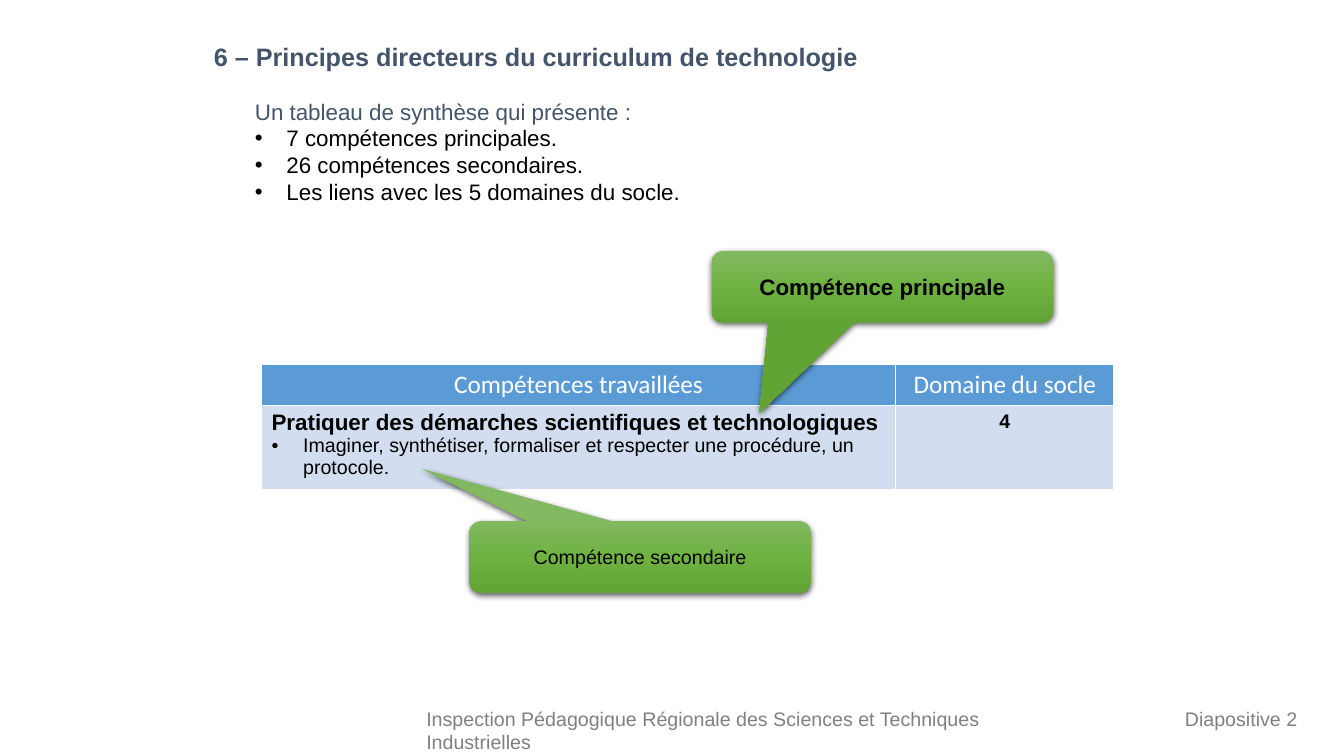
"""Build the slide on the guiding principles of the technology curriculum."""
from pptx import Presentation
from pptx.dml.color import RGBColor
from pptx.enum import shapes, text
from pptx.oxml import parse_xml
from pptx.oxml.ns import nsdecls
from pptx.util import Pt

NAVY = RGBColor(0x44, 0x54, 0x6A)
GREY = RGBColor(0x80, 0x80, 0x80)
BLACK = RGBColor(0, 0, 0)
WHITE = RGBColor(0xFF, 0xFF, 0xFF)
BLUE = RGBColor(0x5B, 0x9B, 0xD5)
PALE = RGBColor(0xD2, 0xDE, 0xEF)
GREENS = [(0, RGBColor(0x81, 0xB8, 0x61)), (50, RGBColor(0x6F, 0xB2, 0x42)),
          (100, RGBColor(0x62, 0xA3, 0x36))]
LEFT, MID, RIGHT = text.PP_ALIGN.LEFT, text.PP_ALIGN.CENTER, text.PP_ALIGN.RIGHT


def style(para, size, color, bold=False, align=LEFT, face="Arial"):
    """Format a paragraph and its runs."""
    para.alignment = align
    for run in para.runs:
        font = run.font
        font.name, font.size, font.bold = face, Pt(size), bold
        font.color.rgb = color


def bullet(para):
    """Give a paragraph a hanging round bullet."""
    props = para._p.get_or_add_pPr()
    props.set("marL", str(Pt(22.5)))
    props.set("indent", str(-Pt(22.5)))
    props.append(parse_xml(f'<a:buFont {nsdecls("a")} typeface="Arial"/>'))
    props.append(parse_xml(f'<a:buChar {nsdecls("a")} char="•"/>'))


def place(shape, left, top, width, height):
    """Move and size a shape, in points."""
    shape.left, shape.top = Pt(left), Pt(top)
    shape.width, shape.height = Pt(width), Pt(height)


def add_title(slide, words):
    """Fill and format the title placeholder."""
    title = slide.shapes.title
    place(title, 145.5, 26, 482, 29)
    frame = title.text_frame
    frame.text = words
    frame.word_wrap = True
    frame.auto_size = text.MSO_AUTO_SIZE.NONE
    frame.vertical_anchor = text.MSO_ANCHOR.TOP
    style(frame.paragraphs[0], 18, NAVY, True)


def add_text(slide, box, words):
    """Add a wrapping text box and return its text frame."""
    frame = slide.shapes.add_textbox(*map(Pt, box)).text_frame
    frame.word_wrap = True
    frame.text = words
    return frame


def add_list(slide):
    """Add the introduction and its bullet points."""
    frame = add_text(slide, (175, 66.2, 322, 85),
                     "Un tableau de synthèse qui présente :")
    style(frame.paragraphs[0], 16, NAVY)
    for words in ("7 compétences principales.", "26 compétences secondaires.",
                  "Les liens avec les 5 domaines du socle."):
        para = frame.add_paragraph()
        para.text = words
        bullet(para)
        style(para, 16, BLACK)


def fill_cell(cell, words, color):
    """Set the text, fill and white borders of a cell."""
    cell.text = words
    props = cell._tc.get_or_add_tcPr()
    for side in "LRTB":
        props.append(parse_xml(
            f'<a:ln{side} {nsdecls("a")} w="{Pt(1)}"><a:solidFill>'
            f'<a:srgbClr val="{WHITE}"/></a:solidFill></a:ln{side}>'))
    cell.fill.solid()
    cell.fill.fore_color.rgb = color


def add_grid(slide):
    """Add the table of skills."""
    table = slide.shapes.add_table(2, 2, *map(Pt, (186.8, 260.2, 609, 89))).table
    for col, width in zip(table.columns, (453, 156)):
        col.width = Pt(width)
    for row, height in zip(table.rows, (29.2, 59.8)):
        row.height = Pt(height)
    for col, words in enumerate(("Compétences travaillées", "Domaine du socle")):
        cell = table.cell(0, col)
        fill_cell(cell, words, BLUE)
        style(cell.text_frame.paragraphs[0], 18, WHITE, align=MID, face="Calibri")
    skill, field = table.cell(1, 0), table.cell(1, 1)
    fill_cell(skill, "Pratiquer des démarches scientifiques et technologiques\n"
              "Imaginer, synthétiser, formaliser et respecter une procédure, "
              "un protocole.", PALE)
    main_line, sub_line = skill.text_frame.paragraphs
    style(main_line, 16, BLACK, True)
    bullet(sub_line)
    style(sub_line, 14, BLACK)
    fill_cell(field, "4", PALE)
    style(field.text_frame.paragraphs[0], 14, BLACK, True, MID)


def add_callout(slide, left, top, tip, words, size, bold):
    """Add a green callout whose tail ends at tip."""
    shape = slide.shapes.add_shape(
        shapes.MSO_SHAPE.ROUNDED_RECTANGULAR_CALLOUT,
        Pt(left), Pt(top), Pt(244), Pt(51.2))
    shape.adjustments[0], shape.adjustments[1] = tip
    shape.line.fill.background()
    stops = "".join(f'<a:gs pos="{pos * 1000}"><a:srgbClr val="{color}"/></a:gs>'
                    for pos, color in GREENS)
    props = shape._element.spPr
    props.insert(2, parse_xml(
        f'<a:gradFill {nsdecls("a")} rotWithShape="1"><a:gsLst>{stops}</a:gsLst>'
        '<a:lin ang="5400000" scaled="0"/></a:gradFill>'))
    props.append(parse_xml(
        f'<a:effectLst {nsdecls("a")}><a:outerShdw blurRad="{Pt(4.5)}" '
        f'dist="{Pt(1.5)}" dir="5400000" algn="ctr" rotWithShape="0">'
        f'<a:srgbClr val="{BLACK}"><a:alpha val="63000"/></a:srgbClr>'
        '</a:outerShdw></a:effectLst>'))
    frame = shape.text_frame
    frame.text = words
    frame.word_wrap = True
    frame.vertical_anchor = text.MSO_ANCHOR.MIDDLE
    style(frame.paragraphs[0], size, BLACK, bold, MID)


def add_foot(slide, left, width, words, align):
    """Add a grey footer text."""
    frame = add_text(slide, (left, 501.1, width, 24.5), words)
    style(frame.paragraphs[0], 14, GREY, align=align)


def main():
    """Build and save the slide."""
    deck = Presentation()
    deck.slide_width, deck.slide_height = Pt(960), Pt(540)
    slide = deck.slides.add_slide(deck.slide_layouts[5])
    add_foot(slide, 297.4, 484.6, "Inspection Pédagogique Régionale des Sciences "
             "et Techniques Industrielles", LEFT)
    add_foot(slide, 821.5, 112.3, "Diapositive 2", RIGHT)
    add_title(slide, "6 – Principes directeurs du curriculum de technologie")
    add_list(slide)
    add_grid(slide)
    add_callout(slide, 508.3, 179.3, (-0.36, 1.76), "Compétence principale", 16, True)
    add_callout(slide, 335.3, 372.2, (-0.64, -1.23), "Compétence secondaire", 14, False)
    deck.save("out.pptx")


if __name__ == "__main__":
    main()
